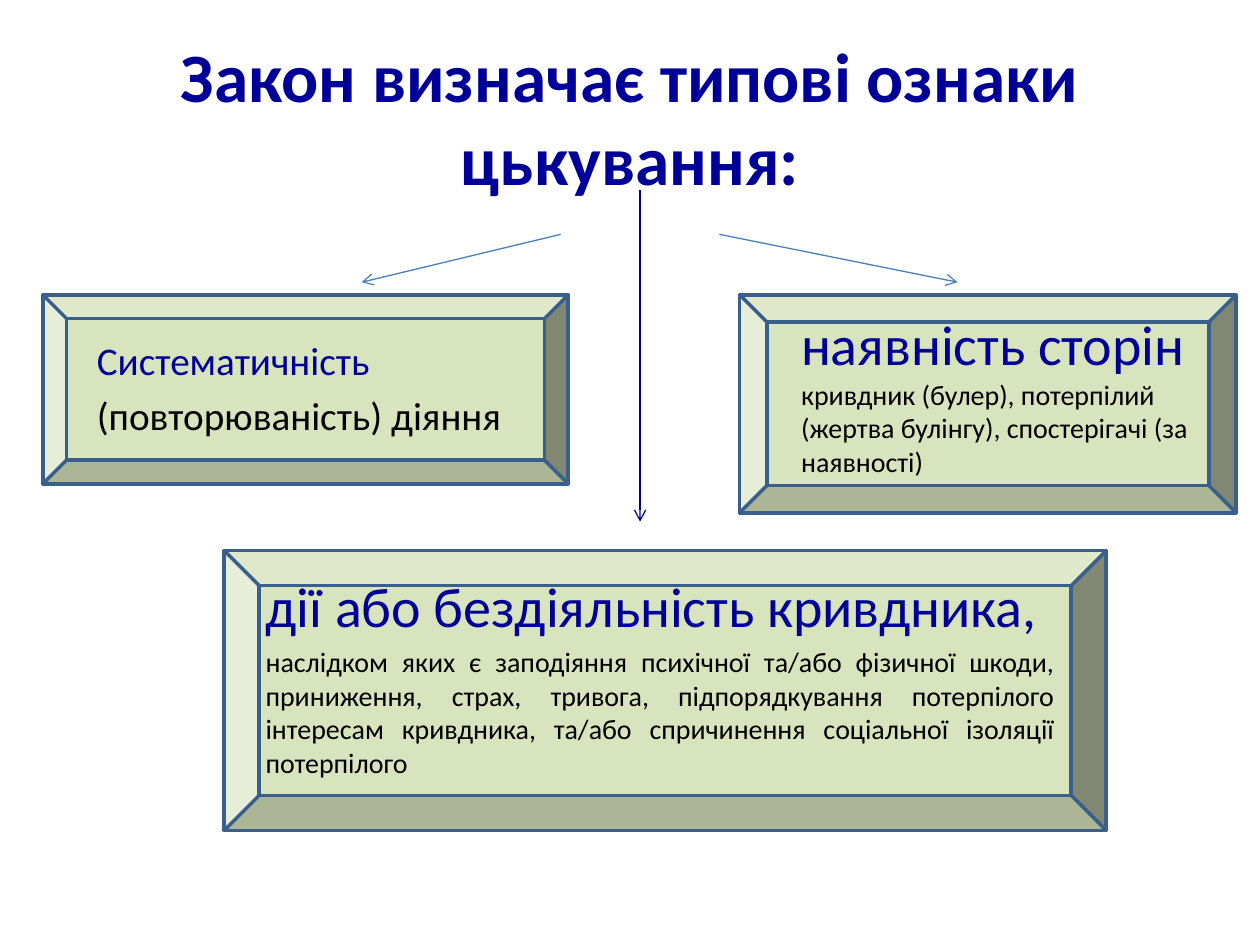
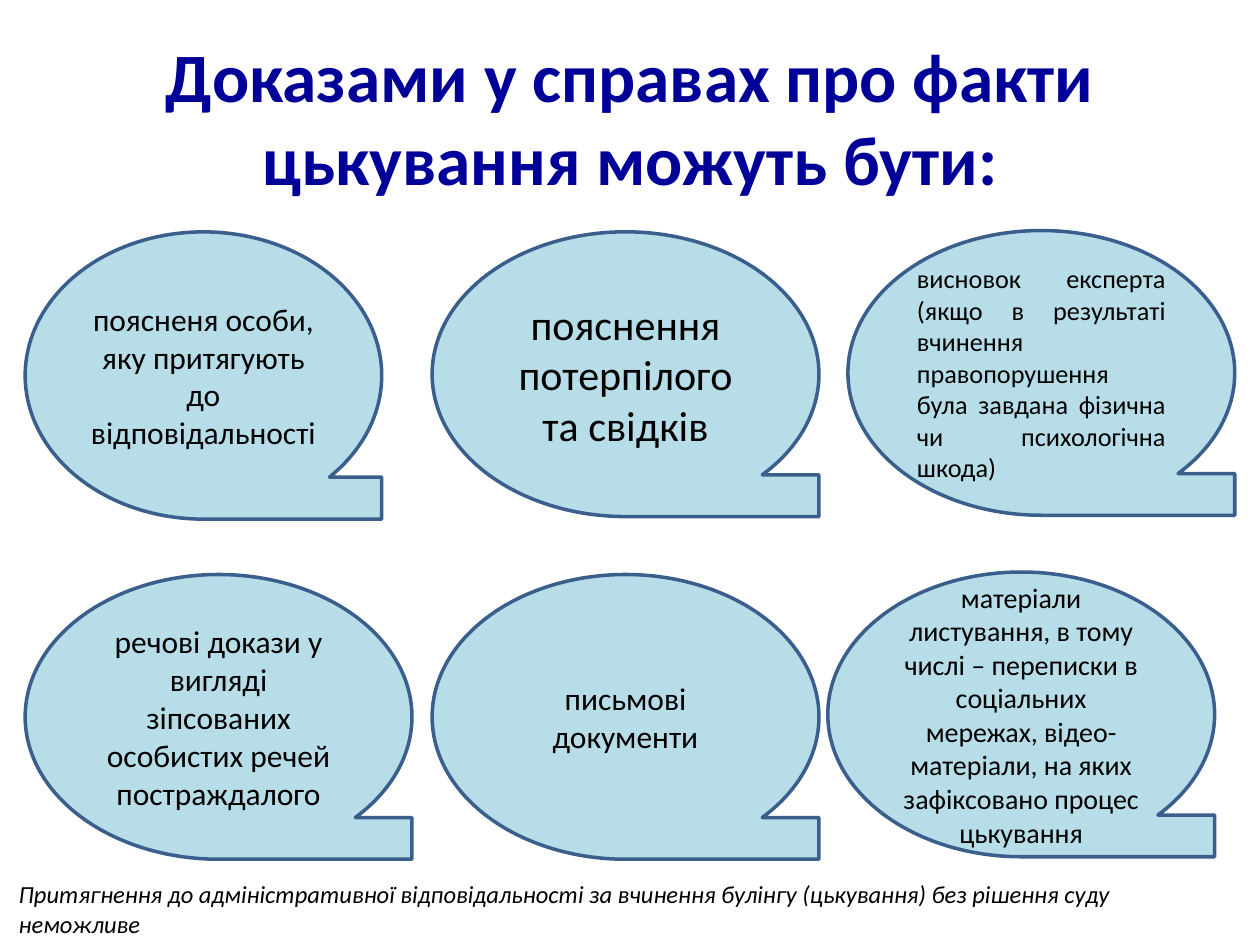
from lxml import etree
from pptx import Presentation
from pptx.dml.color import RGBColor
from pptx.enum import shapes, text
from pptx.oxml.ns import qn
from pptx.util import Inches, Pt

NAVY = RGBColor(0x00, 0x00, 0x99)
BLACK = RGBColor(0x00, 0x00, 0x00)
GREEN = RGBColor(0xD7, 0xE4, 0xBD)
AQUA = RGBColor(0xB7, 0xDE, 0xE8)
OUTLINE = RGBColor(0x3A, 0x5F, 0x8C)
ARROW_BLUE = RGBColor(0x4B, 0x7E, 0xBC)
FONT = "Calibri"
LEFT, CENTER, JUSTIFY = (text.PP_ALIGN.LEFT, text.PP_ALIGN.CENTER,
                         text.PP_ALIGN.JUSTIFY)

SIGNS_TITLE = "Закон визначає типові ознаки цькування:"
# Bevel box, text box, paragraphs: (alignment, space before, runs of (words, size, colour))
SIGNS = [
    ((1.78, 4.37, 7, 2.22), (2.01, 4.49, 6.46, 1.77), [
        (LEFT, 0, [("дії або бездіяльність кривдника,", 32, NAVY)]),
        (JUSTIFY, 3.2, [("наслідком яких є заподіяння психічної та/або фізичної шкоди, "
                         "приниження, страх, тривога, підпорядкування потерпілого "
                         "інтересам кривдника, та/або спричинення соціальної ізоляції "
                         "потерпілого", 16, BLACK)]),
    ]),
    ((5.87, 2.34, 3.94, 1.73), (6.26, 2.41, 3.46, 1.45), [
        (LEFT, 0, [("наявність сторін ", 32, NAVY),
                   ("кривдник (булер), потерпілий (жертва булінгу), "
                    "спостерігачі (за наявності)", 16, BLACK)]),
    ]),
    ((0.34, 2.34, 4.17, 1.5), (0.67, 2.62, 3.46, 0.87), [
        (LEFT, 0, [("Систематичність", 22.4, NAVY)]),
        (LEFT, 4.5, [("(повторюваність) діяння", 22.4, BLACK)]),
    ]),
]
ARROWS = [
    ((4.45, 1.86), (2.87, 2.24), ARROW_BLUE),
    ((5.71, 1.86), (7.6, 2.24), ARROW_BLUE),
    ((5.08, 1.51), (5.08, 4.14), NAVY),
]

EVIDENCE_TITLE = "Доказами у справах про факти цькування можуть бути:"
EVIDENCE = [
    ((0.2, 1.84, 2.83, 2.28), 18, CENTER,
     "поясненя особи, яку притягують до відповідальності"),
    ((3.43, 1.84, 3.07, 2.26), 24, CENTER, "пояснення потерпілого та свідків"),
    ((6.73, 1.83, 3.07, 2.26), 15, JUSTIFY,
     "висновок експерта (якщо в результаті вчинення правопорушення "
     "була завдана фізична чи психологічна шкода)"),
    ((0.2, 4.56, 3.07, 2.26), 18, CENTER,
     "речові докази у вигляді зіпсованих особистих речей постраждалого"),
    ((3.43, 4.56, 3.07, 2.26), 18, CENTER, "письмові документи"),
    ((6.57, 4.54, 3.07, 2.26), 16, CENTER,
     "матеріали листування, в тому числі – переписки в соціальних мережах, "
     "відео-матеріали, на яких зафіксовано процес цькування"),
]
COURT_NOTE = ("Притягнення до адміністративної відповідальності за вчинення булінгу "
              "(цькування) без рішення суду неможливе")


def inches(values):
    return [Inches(value) for value in values]


def write(shape, paragraphs, anchor=text.MSO_ANCHOR.TOP, bold=False, italic=False):
    frame = shape.text_frame
    frame.word_wrap = True
    frame.vertical_anchor = anchor
    for index, (alignment, space_before, runs) in enumerate(paragraphs):
        paragraph = frame.add_paragraph() if index else frame.paragraphs[0]
        paragraph.alignment = alignment
        paragraph.space_before = Pt(space_before)
        paragraph.font.name = FONT
        paragraph.font.bold = bold
        paragraph.font.italic = italic
        for words, size, color in runs:
            run = paragraph.add_run()
            run.text = words
            run.font.size = Pt(size)
            run.font.color.rgb = color


def add_text(slide, box, paragraphs, **style):
    write(slide.shapes.add_textbox(*inches(box)), paragraphs, **style)


def add_panel(slide, kind, box, fill):
    panel = slide.shapes.add_shape(kind, *inches(box))
    panel.shadow.inherit = False
    panel.fill.solid()
    panel.fill.fore_color.rgb = fill
    panel.line.color.rgb = OUTLINE
    panel.line.width = Pt(2)
    return panel


def add_arrow(slide, start, end, color):
    arrow = slide.shapes.add_connector(shapes.MSO_CONNECTOR.STRAIGHT,
                                       *inches(start + end))
    arrow.line.color.rgb = color
    arrow.line.width = Pt(0.75)
    etree.SubElement(arrow.line._get_or_add_ln(), qn("a:tailEnd"), type="arrow")
    etree.SubElement(arrow._element.spPr, qn("a:effectLst"))


def add_titled_slide(presentation, title):
    slide = presentation.slides.add_slide(presentation.slide_layouts[6])
    add_text(slide, (0.5, 0.3, 9, 1.25), [(CENTER, 0, [(title, 39.6, NAVY)])],
             anchor=text.MSO_ANCHOR.MIDDLE, bold=True)
    return slide


def build_signs(presentation):
    slide = add_titled_slide(presentation, SIGNS_TITLE)
    for bevel_box, text_box, paragraphs in SIGNS:
        add_panel(slide, shapes.MSO_SHAPE.BEVEL, bevel_box, GREEN)
        add_text(slide, text_box, paragraphs)
    for start, end, color in ARROWS:
        add_arrow(slide, start, end, color)


def build_evidence(presentation):
    slide = add_titled_slide(presentation, EVIDENCE_TITLE)
    tape = shapes.MSO_SHAPE.FLOWCHART_SEQUENTIAL_ACCESS_STORAGE
    for box, size, alignment, words in EVIDENCE:
        write(add_panel(slide, tape, box, AQUA),
              [(alignment, 0, [(words, size, BLACK)])],
              anchor=text.MSO_ANCHOR.MIDDLE)
    add_text(slide, (0.05, 6.93, 9.85, 0.57),
             [(LEFT, 0, [(COURT_NOTE, 14, BLACK)])], italic=True)


def main():
    presentation = Presentation()
    presentation.slide_width, presentation.slide_height = Inches(10), Inches(7.5)
    build_signs(presentation)
    build_evidence(presentation)
    presentation.save("out.pptx")


if __name__ == "__main__":
    main()
